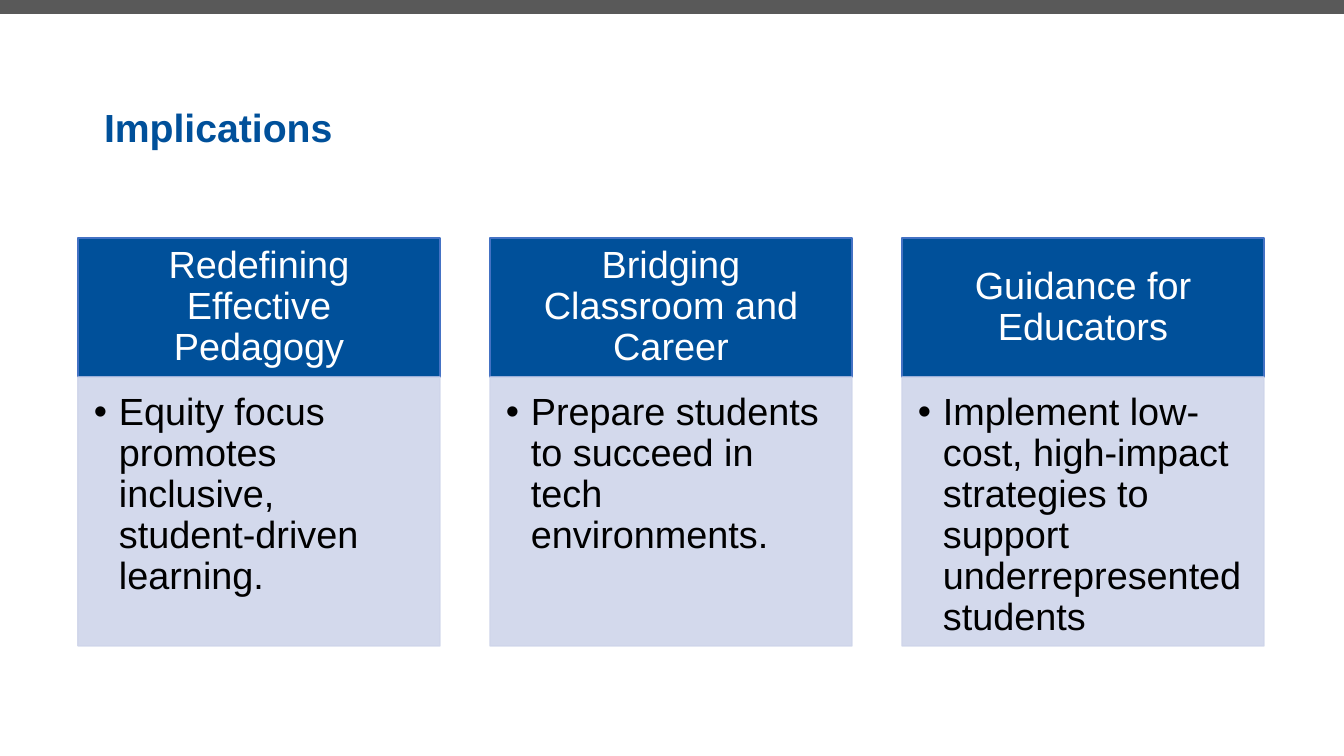
"""Build the Implications slide: a title above three headed columns."""
from lxml import etree
from pptx import Presentation
from pptx import util as u
from pptx.dml.color import RGBColor
from pptx.enum import shapes, text
from pptx.oxml.ns import qn

TITLE = "Implications"
COLUMNS = [
    ("Redefining Effective Pedagogy",
     "Equity focus promotes inclusive, student-driven learning."),
    ("Bridging Classroom and Career",
     "Prepare students to succeed in tech environments."),
    ("Guidance for Educators",
     "Implement low-cost, high-impact strategies to support underrepresented students"),
]
COLORS = {"bar": "595959", "blue": "00509A", "edge": "4472C4",
          "pale": "CFD5EA", "white": "FFFFFF", "black": "000000"}
FONT = "Arial"
SLIDE_SIZE = (1344, 756)
BAR_BOX = (0, 0, 1344, 14)
TITLE_BOX = (94, 98, 972, 57)
COLUMN_LEFT, COLUMN_WIDTH, COLUMN_PITCH = 78, 362, 412
HEAD_TOP, HEAD_HEIGHT, BODY_HEIGHT = 238, 139, 269
BULLET_INDENT = 25
BODY_OPACITY = 90

TITLE_STYLE = {"size": 28, "color": "blue", "bold": True, "insets": (10, 5, 10, 5),
               "anchor": text.MSO_ANCHOR.TOP, "align": text.PP_ALIGN.LEFT, "spacing": 1.0}
HEAD_STYLE = {"size": 27, "color": "white", "bold": False, "insets": (21, 12, 21, 12),
              "anchor": text.MSO_ANCHOR.MIDDLE, "align": text.PP_ALIGN.CENTER, "spacing": 0.9}
BODY_STYLE = {"size": 27, "color": "black", "bold": False, "insets": (16, 16, 21, 24),
              "anchor": text.MSO_ANCHOR.TOP, "align": text.PP_ALIGN.LEFT, "spacing": 0.9}


def px(length):
    return u.Emu(round(length * 914400 / 100.8))


def rgb(name):
    return RGBColor.from_string(COLORS[name])


def set_all(target, values):
    for name, value in values.items():
        setattr(target, name, value)


def add_rectangle(slide, box, fill, edge=None):
    shape = slide.shapes.add_shape(shapes.MSO_SHAPE.RECTANGLE, *map(px, box))
    shape.shadow.inherit = False
    shape.fill.solid()
    shape.fill.fore_color.rgb = rgb(fill)
    if edge:
        shape.line.color.rgb = rgb(edge)
        shape.line.width = u.Pt(1)
    else:
        shape.line.fill.background()
    return shape


def set_opacity(shape, percent):
    for color in shape._element.spPr.iter(qn("a:srgbClr")):
        etree.SubElement(color, qn("a:alpha"), val=str(percent * 1000))


def add_bullet(paragraph):
    properties = paragraph._p.get_or_add_pPr()
    properties.set("marL", str(px(BULLET_INDENT)))
    properties.set("indent", str(-px(BULLET_INDENT)))
    etree.SubElement(properties, qn("a:buFont"), typeface=FONT)
    etree.SubElement(properties, qn("a:buChar"), char="•")


def write(shape, wording, style, bullet=False):
    frame = shape.text_frame
    left, top, right, bottom = map(px, style["insets"])
    set_all(frame, {"word_wrap": True, "vertical_anchor": style["anchor"],
                    "margin_left": left, "margin_top": top,
                    "margin_right": right, "margin_bottom": bottom})
    paragraph = frame.paragraphs[0]
    if bullet:
        add_bullet(paragraph)
    set_all(paragraph, {"alignment": style["align"], "line_spacing": style["spacing"]})
    run = paragraph.add_run()
    run.text = wording
    set_all(run.font, {"name": FONT, "size": u.Pt(style["size"]), "bold": style["bold"]})
    run.font.color.rgb = rgb(style["color"])


def main():
    presentation = Presentation()
    width, height = map(px, SLIDE_SIZE)
    set_all(presentation, {"slide_width": width, "slide_height": height})
    slide = presentation.slides.add_slide(presentation.slide_layouts[6])
    add_rectangle(slide, BAR_BOX, "bar")
    write(slide.shapes.add_textbox(*map(px, TITLE_BOX)), TITLE, TITLE_STYLE)
    for index, (heading, point) in enumerate(COLUMNS):
        left = COLUMN_LEFT + index * COLUMN_PITCH
        head = add_rectangle(slide, (left, HEAD_TOP, COLUMN_WIDTH, HEAD_HEIGHT), "blue", "edge")
        write(head, heading, HEAD_STYLE)
        body_box = (left, HEAD_TOP + HEAD_HEIGHT, COLUMN_WIDTH, BODY_HEIGHT)
        body = add_rectangle(slide, body_box, "pale", "pale")
        set_opacity(body, BODY_OPACITY)
        write(body, point, BODY_STYLE, bullet=True)
    presentation.save("out.pptx")


if __name__ == "__main__":
    main()
